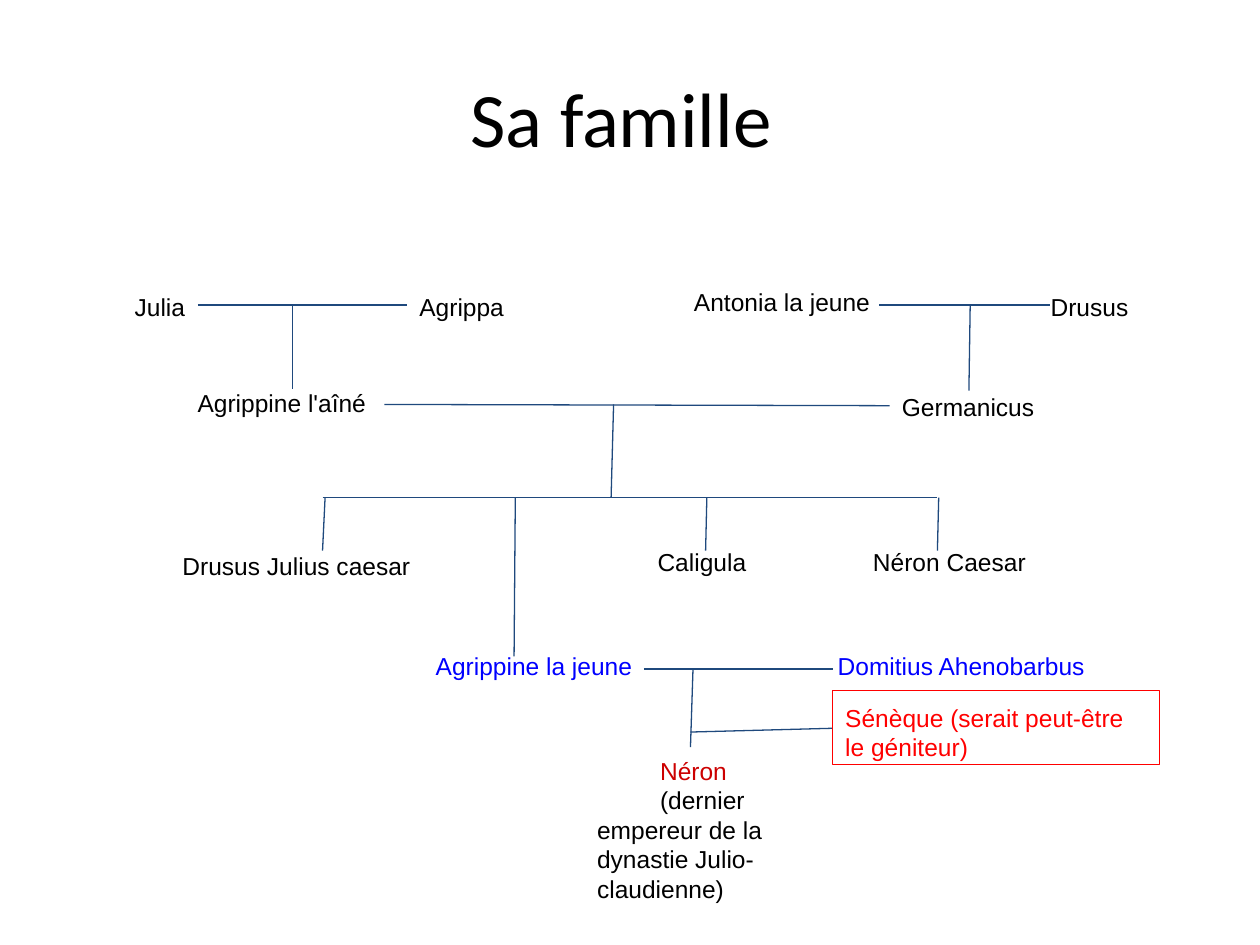
from lxml import etree
from pptx import Presentation
from pptx.dml.color import RGBColor
from pptx.enum.shapes import MSO_CONNECTOR, MSO_SHAPE
from pptx.enum.text import MSO_ANCHOR, PP_ALIGN
from pptx.oxml.ns import qn
from pptx.util import Inches, Pt

BLACK = RGBColor(0x00, 0x00, 0x00)
NAVY = RGBColor(0x1F, 0x49, 0x7D)
BLUE = RGBColor(0x00, 0x00, 0xFF)
RED = RGBColor(0xFF, 0x00, 0x00)
DARK_RED = RGBColor(0xCC, 0x00, 0x00)

deck = Presentation()
deck.slide_width, deck.slide_height = Inches(10), Inches(7.5)
page = deck.slides.add_slide(deck.slide_layouts[6])

# Grid: 10 columns by 7.5 rows of square cells
CELL = deck.slide_width / 10


def cells(*counts):
    return [round(count * CELL) for count in counts]


def write(box, lines, size=14, font="Arial", margin=0.1):
    frame = box.text_frame
    frame.word_wrap = True
    frame.vertical_anchor = MSO_ANCHOR.TOP
    frame.margin_left = frame.margin_right = Inches(0.1)
    frame.margin_top = frame.margin_bottom = Inches(margin)
    for index, (text, color) in enumerate(lines):
        para = frame.add_paragraph() if index else frame.paragraphs[0]
        para.text = text
        para.alignment = PP_ALIGN.LEFT
        para.font.size, para.font.name = Pt(size), font
        para.font.color.rgb = color
    return frame


# Title
title = write(page.shapes.add_textbox(*cells(0.5, 0.3, 9, 1.25)),
              [("Sa famille ", BLACK)], 44, "Calibri", 0.05)
title.vertical_anchor = MSO_ANCHOR.MIDDLE
title.paragraphs[0].alignment = PP_ALIGN.CENTER

# Family links: start column, start row, end column, end row
GRANDPARENTS, PARENTS, CHILDREN, COUPLE = 2.42, 3.21, 3.95, 5.31
links = [
    (1.57, GRANDPARENTS, 3.23, GRANDPARENTS),
    (2.32, GRANDPARENTS, 2.32, 3.09),
    (6.98, GRANDPARENTS, 8.33, GRANDPARENTS),
    (7.7, GRANDPARENTS, 7.69, 3.1),
    (3.05, PARENTS, 7.06, 3.22),
    (4.87, PARENTS, 4.85, CHILDREN),
    (2.56, CHILDREN, 7.44, CHILDREN),
    (2.58, CHILDREN, 2.56, 4.37),
    (4.09, CHILDREN, 4.08, 5.21),
    (5.61, CHILDREN, 5.6, 4.37),
    (7.45, CHILDREN, 7.44, 4.37),
    (5.11, COUPLE, 6.61, COUPLE),
    (5.5, COUPLE, 5.48, 5.93),
    (5.48, 5.81, 6.61, 5.78),
]
for ends in links:
    link = page.shapes.add_connector(MSO_CONNECTOR.STRAIGHT, *cells(*ends))
    link.line.color.rgb = NAVY
    link.line.width = Pt(0.75)
    etree.SubElement(link._element.spPr, qn("a:effectLst"))

# Family members: name, left, top, width, colour
members = [
    ("Julia", 0.97, 2.22, 1, BLACK),
    ("Agrippa", 3.23, 2.22, 1.05, BLACK),
    ("Antonia la jeune", 5.41, 2.18, 1.7, BLACK),
    ("Drusus", 8.24, 2.22, 1.14, BLACK),
    ("Agrippine l'aîné", 1.47, 2.98, 1.7, BLACK),
    ("Germanicus", 7.06, 3.01, 1.27, BLACK),
    ("Drusus Julius caesar", 1.35, 4.27, 2.1, BLACK),
    ("Caligula", 5.12, 4.24, 1.49, BLACK),
    ("Néron Caesar", 6.83, 4.24, 1.66, BLACK),
    ("Agrippine la jeune", 3.36, 5.07, 1.83, BLUE),
    ("Domitius Ahenobarbus", 6.55, 5.07, 2.22, BLUE),
]
for name, left, top, width, color in members:
    write(page.shapes.add_textbox(*cells(left, top, width, 0.41)), [(name, color)])

# Néron, with indented first lines
neron = write(page.shapes.add_textbox(*cells(4.14, 5.9, 2.69, 0.82)), [
    ("Néron", DARK_RED),
    ("(dernier empereur de la dynastie Julio-claudienne)", BLACK),
])
for para in neron.paragraphs:
    properties = para._p.get_or_add_pPr()
    properties.set("marL", str(Inches(0.5)))
    properties.set("indent", str(Inches(0.5)))

# Framed remark on Sénèque
remark = page.shapes.add_shape(MSO_SHAPE.RECTANGLE, *cells(6.61, 5.48, 2.59, 0.59))
remark.shadow.inherit = False
remark.fill.background()
remark.line.color.rgb = RED
remark.line.width = Pt(0.75)
write(remark, [("Sénèque (serait peut-être le géniteur)", RED)])

deck.save("out.pptx")
